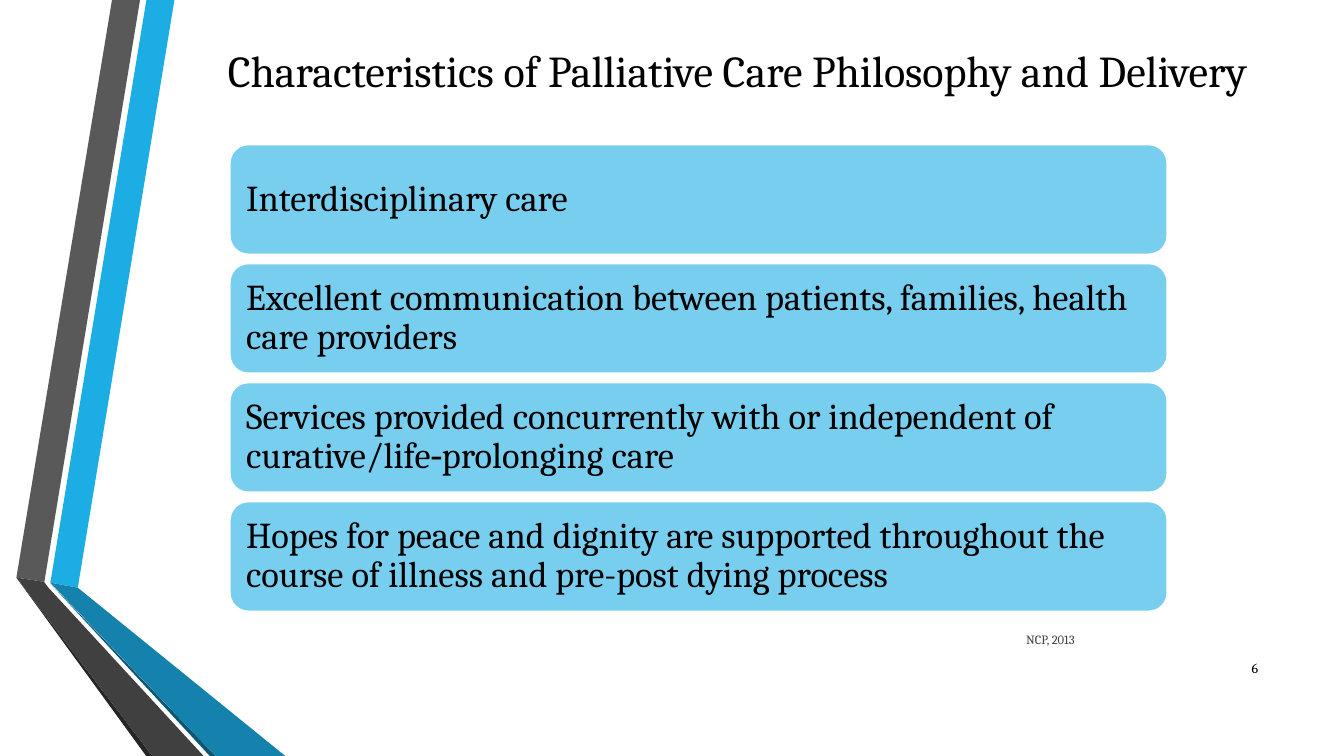
"""Builds the slide on the characteristics of palliative care."""
from pptx import Presentation
from pptx.dml.color import RGBColor
from pptx.enum.shapes import MSO_SHAPE as Shape
from pptx.enum.text import MSO_ANCHOR as Anchor, PP_ALIGN as Align
from pptx.util import Pt

RIBBONS = [
    ("1CADE4", [(36, 416.2), (55.6, 419.8), (124.6, 0), (104.6, 0)]),
    ("595959", [(100, 0), (80, 0), (11.7, 412.6), (31.7, 415.6)]),
    ("262626", [(11.7, 412.6), (104.4, 540), (108.8, 540)]),
    ("0E5772", [(36, 416.8), (149.8, 540), (154, 540)]),
    ("1482AC", [(36, 416.2), (154, 540), (203.8, 540), (55.6, 419.8)]),
    ("404040", [(11.7, 412.6), (108.8, 540), (145.4, 540), (34.6, 419.8), (31.4, 415.6)]),
]
CHARACTERISTICS = [
    "Interdisciplinary care",
    "Excellent communication between patients, families, health care providers",
    "Services provided concurrently with or independent of curative/life‐prolonging care",
    "Hopes for peace and dignity are supported throughout the course of illness and pre-post dying process",
]
CARD_TOP, CARD_PITCH = 103.2, 85


def color(hex_code):
    return RGBColor.from_string(hex_code)


def write(frame, text, *, size, font="Cambria", ink="000000", align=Align.LEFT,
          anchor=Anchor.MIDDLE, spacing=None, margins=(7.2, 3.6)):
    frame.word_wrap = True
    frame.vertical_anchor = anchor
    frame.margin_left = frame.margin_right = Pt(margins[0])
    frame.margin_top = frame.margin_bottom = Pt(margins[1])
    paragraph = frame.paragraphs[0]
    paragraph.alignment = align
    paragraph.line_spacing = spacing
    run = paragraph.add_run()
    run.text = text
    run.font.name = font
    run.font.size = Pt(size)
    run.font.color.rgb = color(ink)


class SlideBuilder:
    card_fill = "77CEEF"
    card_line = "FFFFFF"

    def __init__(self, slide):
        self.shapes = slide.shapes

    def ribbon(self, fill, points):
        start, *rest = [(Pt(x), Pt(y)) for x, y in points]
        builder = self.shapes.build_freeform(*start)
        builder.add_line_segments(rest, close=True)
        shape = builder.convert_to_shape()
        shape.shadow.inherit = False
        shape.fill.solid()
        shape.fill.fore_color.rgb = color(fill)
        shape.line.fill.background()

    def text(self, text, left, top, width, height, **style):
        box = self.shapes.add_textbox(Pt(left), Pt(top), Pt(width), Pt(height))
        write(box.text_frame, text, **style)

    def card(self, text, left, top, width, height):
        shape = self.shapes.add_shape(
            Shape.ROUNDED_RECTANGLE, Pt(left), Pt(top), Pt(width), Pt(height))
        shape.shadow.inherit = False
        shape.fill.solid()
        shape.fill.fore_color.rgb = color(self.card_fill)
        shape.line.color.rgb = color(self.card_line)
        shape.line.width = Pt(1.25)
        write(shape.text_frame, text, size=26, spacing=0.9, margins=(7.8, 7.8))


def main():
    presentation = Presentation()
    presentation.slide_width, presentation.slide_height = Pt(960), Pt(540)
    slide = presentation.slides.add_slide(presentation.slide_layouts[6])
    builder = SlideBuilder(slide)
    for fill, points in RIBBONS:
        builder.ribbon(fill, points)
    builder.text("Characteristics of Palliative Care Philosophy and Delivery",
                 112.3, 25.2, 828.7, 49, size=31.5, align=Align.CENTER)
    builder.text("6", 862.6, 463, 43.2, 28.8, size=10, align=Align.RIGHT)
    for index, characteristic in enumerate(CHARACTERISTICS):
        builder.card(characteristic, 164.2, CARD_TOP + index * CARD_PITCH, 669.6, 78.5)
    builder.text("NCP, 2013", 725.8, 447.8, 190.8, 18, size=9, ink="404040", anchor=Anchor.TOP)
    presentation.save("out.pptx")


if __name__ == "__main__":
    main()
